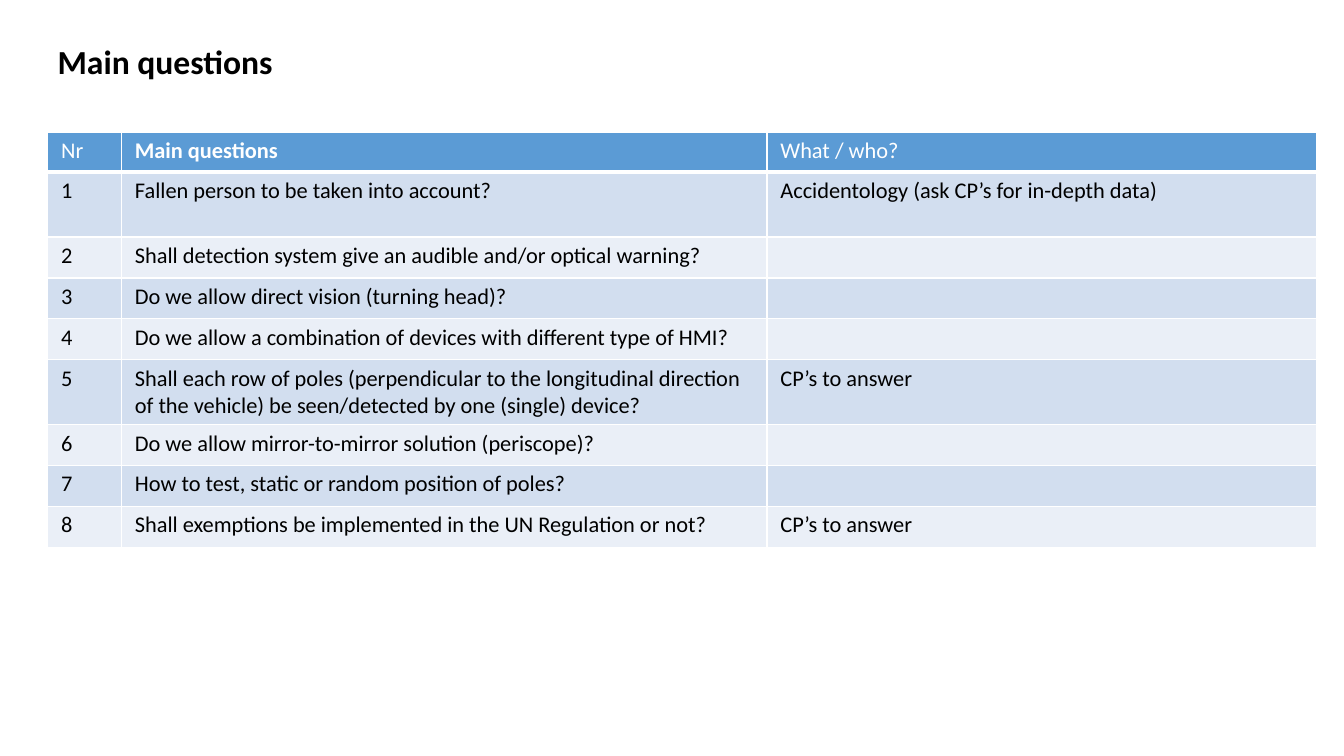
from lxml import etree
from pptx import Presentation
from pptx.dml.color import RGBColor
from pptx.oxml.ns import qn
from pptx.util import Pt

BLACK = RGBColor(0x00, 0x00, 0x00)
WHITE = RGBColor(0xFF, 0xFF, 0xFF)
HEADER_BLUE = RGBColor(0x5B, 0x9B, 0xD5)
BAND_DARK = RGBColor(0xD2, 0xDE, 0xEF)
BAND_LIGHT = RGBColor(0xEA, 0xEF, 0xF7)

HEADINGS = ("Nr", "Main questions", "What / who?")
QUESTIONS = (
    ("Fallen person to be taken into account?", "Accidentology (ask CP’s for in-depth data)"),
    ("Shall detection system give an audible and/or optical warning?", ""),
    ("Do we allow direct vision (turning head)?", ""),
    ("Do we allow a combination of devices with different type of HMI?", ""),
    (
        "Shall each row of poles (perpendicular to the longitudinal direction "
        "of the vehicle) be seen/detected by one (single) device?",
        "CP’s to answer",
    ),
    ("Do we allow mirror-to-mirror solution (periscope)?", ""),
    ("How to test, static or random position of poles?", ""),
    ("Shall exemptions be implemented in the UN Regulation or not?", "CP’s to answer"),
)
COLUMN_WIDTHS = (52.7, 461.1, 392.9)
HEADER_HEIGHT, SINGLE_HEIGHT, DOUBLE_HEIGHT = 28.4, 29.2, 46.4
DOUBLE_ROWS = (1, 5)


class QuestionPage:
    """Draws titles and banded tables on one page in a shared style."""

    font_name = "Calibri"

    def __init__(self, page):
        self.page = page

    def add_span(self, para, text, size, color, bold=False):
        span = para.add_run()
        span.text = text
        span.font.name = self.font_name
        span.font.size = Pt(size)
        span.font.bold = bold
        span.font.color.rgb = color

    def title(self, text, left, top, width, height):
        box = self.page.shapes.add_textbox(Pt(left), Pt(top), Pt(width), Pt(height))
        box.text_frame.word_wrap = True
        self.add_span(box.text_frame.paragraphs[0], text, 24, BLACK, bold=True)

    def border(self, cell, bottom_width):
        properties = cell._tc.get_or_add_tcPr()
        widths = {"a:lnL": 1, "a:lnR": 1, "a:lnT": 1, "a:lnB": bottom_width}
        for position, (side, width) in enumerate(widths.items()):
            line = etree.Element(qn(side), w=str(Pt(width)))
            fill = etree.SubElement(line, qn("a:solidFill"))
            etree.SubElement(fill, qn("a:srgbClr"), val=str(WHITE))
            properties.insert(position, line)

    def cell(self, cell, text, fill, color, bold, bottom_width):
        cell.margin_left = cell.margin_right = Pt(9.6)
        cell.margin_top = cell.margin_bottom = Pt(3.6)
        cell.fill.solid()
        cell.fill.fore_color.rgb = fill
        self.border(cell, bottom_width)
        if text:
            self.add_span(cell.text_frame.paragraphs[0], text, 16, color, bold)

    def table(self, rows, left, top, widths, heights):
        frame = self.page.shapes.add_table(
            len(rows), len(widths), Pt(left), Pt(top), Pt(sum(widths)), Pt(sum(heights))
        )
        table = frame.table
        table.horz_banding = False
        for column, width in zip(table.columns, widths):
            column.width = Pt(width)
        for number, (texts, height) in enumerate(zip(rows, heights)):
            table.rows[number].height = Pt(height)
            header = number == 0
            band = BAND_DARK if number % 2 else BAND_LIGHT
            for index, text in enumerate(texts):
                self.cell(
                    table.cell(number, index),
                    text,
                    fill=HEADER_BLUE if header else band,
                    color=WHITE if header else BLACK,
                    bold=header and index == 1,
                    bottom_width=3 if header else 1,
                )


def main():
    deck = Presentation()
    deck.slide_width, deck.slide_height = Pt(960), Pt(540)
    sheet = QuestionPage(deck.slides.add_slide(deck.slide_layouts[6]))

    rows = [HEADINGS]
    heights = [HEADER_HEIGHT]
    for number, (question, answer) in enumerate(QUESTIONS, start=1):
        rows.append((str(number), question, answer))
        heights.append(DOUBLE_HEIGHT if number in DOUBLE_ROWS else SINGLE_HEIGHT)

    sheet.table(rows, 34.1, 94.6, COLUMN_WIDTHS, heights)
    sheet.title("Main questions", 34.1, 26, 305.3, 36.4)
    deck.save("out.pptx")


if __name__ == "__main__":
    main()
